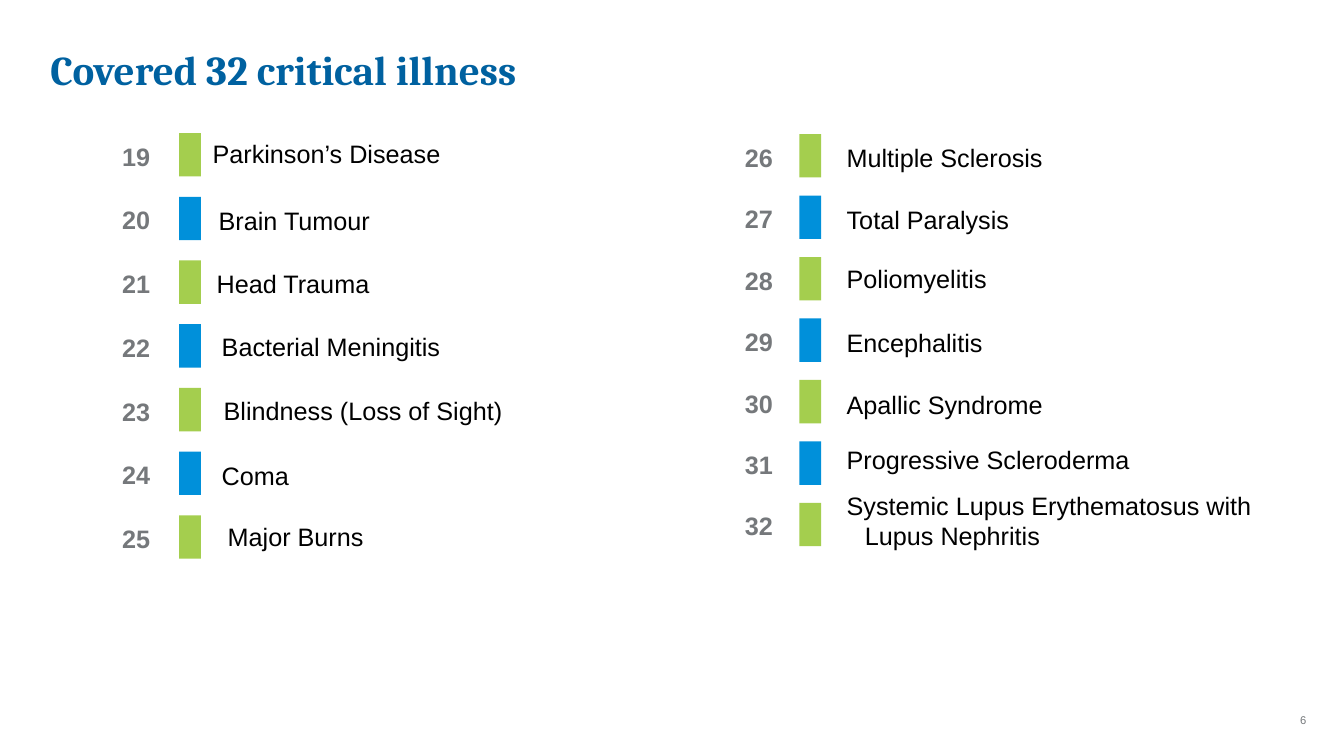
from typing import NamedTuple

from pptx import Presentation
from pptx.dml.color import RGBColor
from pptx.enum.shapes import MSO_SHAPE
from pptx.enum.text import MSO_ANCHOR as Anchor, MSO_AUTO_SIZE as AutoSize, PP_ALIGN as Align
from pptx.shapes.base import BaseShape
from pptx.slide import Slide
from pptx.text.text import TextFrame
from pptx.util import Pt

GREEN, BLUE, GREY, BLACK, TITLE_BLUE = "A4CE4E", "0090DA", "75787B", "000000", "0061A0"
BAR_WIDTH, BAR_HEIGHT = 15.5, 31
NUMBER_WIDTH, NUMBER_HEIGHT = 67.7, 31.7


class Illness(NamedTuple):
    name: str
    left: float
    top: float
    width: float
    height: float = BAR_HEIGHT


class Column(NamedTuple):
    first_number: int
    number_left: float
    bar_left: float
    top: float
    pitch: float
    illnesses: list[Illness]


COLUMNS = [
    Column(19, 63.4, 128, 95.1, 45.5, [
        Illness("Parkinson’s Disease", 133.2, 94.3, 252),
        Illness("Brain Tumour", 137.5, 141.8, 214.6),
        Illness("Head Trauma", 136.1, 187.2, 205.2),
        Illness("Bacterial Meningitis", 139.7, 231.8, 226.8),
        Illness("Blindness (Loss of Sight)", 141.1, 277.9, 301),
        Illness("Coma", 139.7, 324, 255.6),
        Illness("Major Burns", 144, 367.9, 278.6),
    ]),
    Column(26, 508.3, 571, 95.8, 43.9, [
        Illness("Multiple Sclerosis", 586.1, 97.2, 258.5),
        Illness("Total Paralysis", 586.1, 141.1, 320.4),
        Illness("Poliomyelitis", 586.1, 183.6, 332.6),
        Illness("Encephalitis", 586.1, 229, 332.6),
        Illness("Apallic Syndrome", 586.1, 273.6, 332.6),
        Illness("Progressive Scleroderma", 586.1, 312.5, 332.6),
        Illness("Systemic Lupus Erythematosus with Lupus Nephritis", 586.1, 349.9, 339.8, 43.9),
    ]),
]


def color(value: str) -> RGBColor:
    return RGBColor.from_string(value)


def place(shape: BaseShape, left: float, top: float, width: float, height: float) -> None:
    shape.left, shape.top, shape.width, shape.height = map(Pt, (left, top, width, height))


def write(frame: TextFrame, text: str, size: float, ink: str, align: Align,
          anchor: Anchor = Anchor.MIDDLE, bold: bool = False, font_name: str = "Arial") -> None:
    frame.margin_left = frame.margin_top = frame.margin_right = frame.margin_bottom = 0
    frame.word_wrap = True
    frame.auto_size = AutoSize.NONE
    frame.vertical_anchor = anchor
    frame.text = text
    paragraph = frame.paragraphs[0]
    paragraph.alignment = align
    font = paragraph.runs[0].font
    font.name, font.size, font.bold = font_name, Pt(size), bold
    font.color.rgb = color(ink)


def add_text(slide: Slide, left: float, top: float, width: float, height: float,
             text: str, size: float, ink: str, align: Align, bold: bool = False) -> TextFrame:
    box = slide.shapes.add_textbox(Pt(left), Pt(top), Pt(width), Pt(height))
    write(box.text_frame, text, size, ink, align, bold=bold)
    return box.text_frame


def add_bar(slide: Slide, left: float, top: float, fill: str) -> None:
    bar = slide.shapes.add_shape(MSO_SHAPE.RECTANGLE, Pt(left), Pt(top), Pt(BAR_WIDTH), Pt(BAR_HEIGHT))
    bar.shadow.inherit = False
    bar.fill.solid()
    bar.fill.fore_color.rgb = color(fill)
    bar.line.fill.background()


def add_label(slide: Slide, illness: Illness) -> None:
    frame = add_text(slide, illness.left, illness.top, illness.width, illness.height,
                     illness.name, 18, BLACK, Align.LEFT)
    paragraph = frame.paragraphs[0]
    paragraph.level = 1
    paragraph.space_after = Pt(6)
    properties = paragraph._p.get_or_add_pPr()
    properties.set("marL", str(Pt(31.7)))
    properties.set("indent", str(Pt(-13)))


def add_column(slide: Slide, column: Column) -> None:
    for row, illness in enumerate(column.illnesses):
        top = column.top + row * column.pitch
        number = column.first_number + row
        add_bar(slide, column.bar_left, top, BLUE if row % 2 else GREEN)
        add_text(slide, column.number_left, top + 0.6, NUMBER_WIDTH, NUMBER_HEIGHT,
                 str(number), 18, GREY, Align.CENTER, bold=True)
        add_label(slide, illness)


def main() -> None:
    presentation = Presentation()
    presentation.slide_width, presentation.slide_height = Pt(960), Pt(540)
    slide = presentation.slides.add_slide(presentation.slide_layouts[5])

    # Title
    title = slide.shapes.title
    place(title, 36, 36, 744.5, 57.6)
    write(title.text_frame, "Covered 32 critical illness", 29.3, TITLE_BLUE, Align.LEFT,
          Anchor.TOP, bold=True, font_name="Cambria")
    title.text_frame.paragraphs[0].line_spacing = 0.9

    # Numbered illnesses
    for column in COLUMNS:
        add_column(slide, column)

    # Page number
    add_text(slide, 902.2, 505.4, 57.6, 18, "6", 8, GREY, Align.CENTER)

    presentation.save("out.pptx")


if __name__ == "__main__":
    main()
